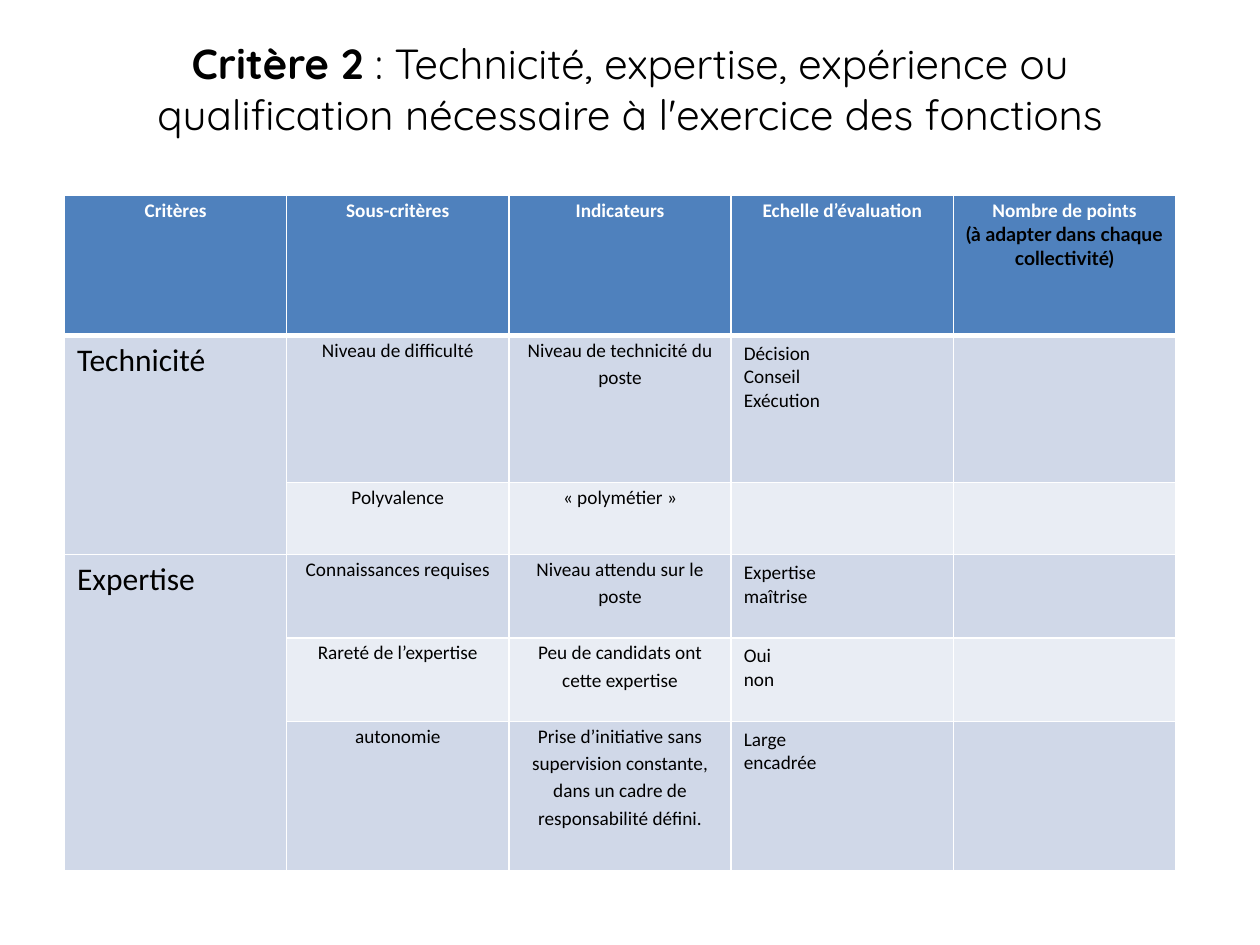
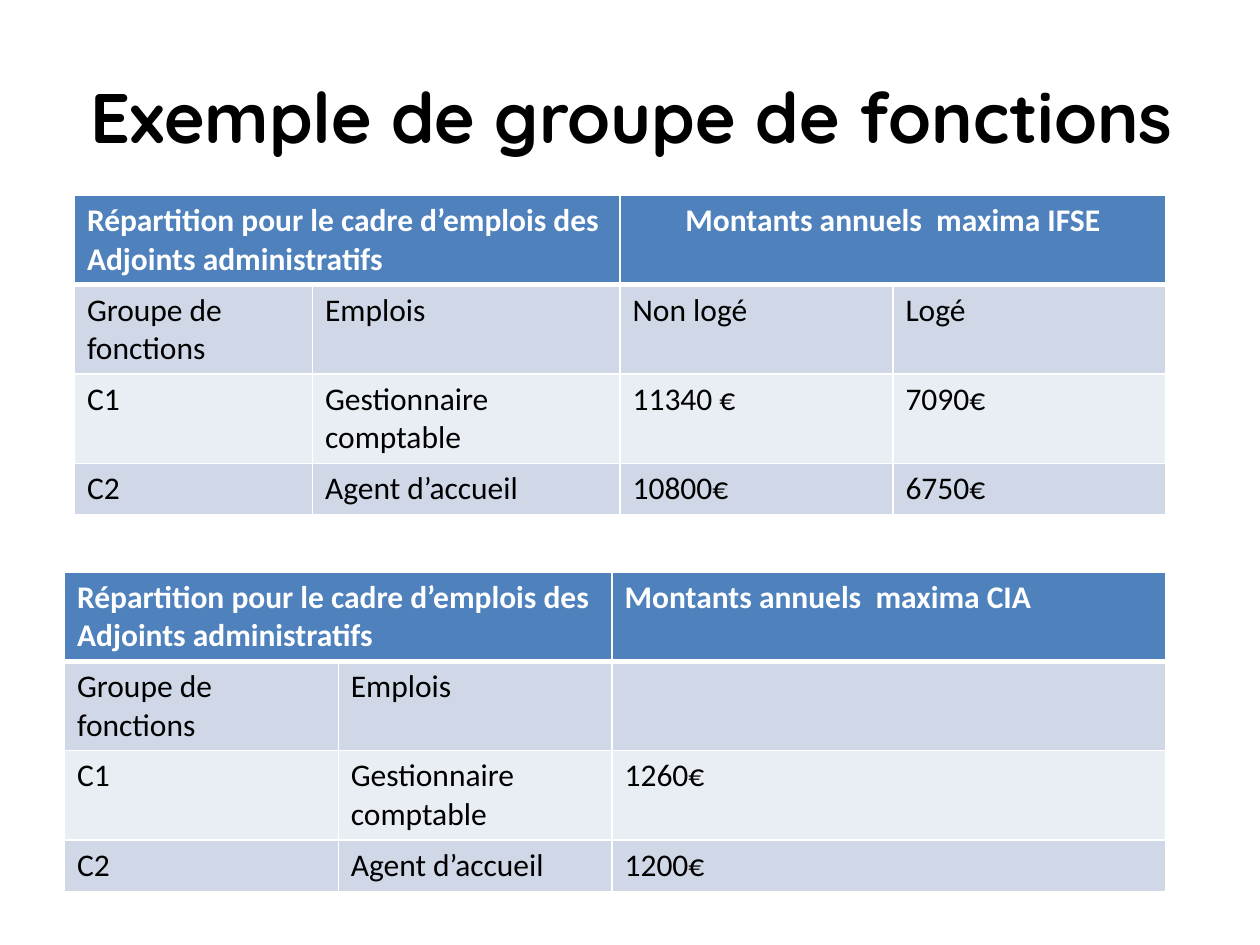
from dataclasses import dataclass

from lxml.etree import SubElement
from pptx import Presentation
from pptx.dml.color import RGBColor
from pptx.enum.text import MSO_ANCHOR as Anchor, PP_ALIGN as Align
from pptx.oxml.ns import qn
from pptx.util import Cm, Pt


@dataclass(frozen=True)
class Theme:
    """Colours, fonts and type sizes shared by the slides."""
    text: str = "000000"
    white: str = "FFFFFF"
    header: str = "4F81BD"
    bands: tuple = ("E9EDF4", "D0D8E8")
    title_font: str = "Quicksand"
    body_font: str = "Calibri"
    note_font: str = "Lato"
    title: int = 40
    long_title: int = 24
    body: int = 18
    small: int = 11
    rule: int = 1
    header_rule: int = 3


THEME = Theme()
TITLE_SIZE = (22.86, 3.18)
TABLE_TOP = 3.94
CRITERIA_ROWS = (2.82, 2.97, 1.45, 1.68, 1.68, 3.02)
AMOUNT_ROWS = (1.8, 1.8, 1.8, 1.04)
AMOUNT_HEADING = "Répartition pour le cadre d’emplois des Adjoints administratifs"

CRITERIA = (
    ("Critères", "Sous-critères", "Indicateurs", "Echelle d’évaluation", "Nombre de points"),
    ("Technicité", "Niveau de difficulté", "Niveau de technicité du poste",
     "Décision\nConseil\nExécution", ""),
    ("", "Polyvalence", "« polymétier »", "", ""),
    ("Expertise", "Connaissances requises", "Niveau attendu sur le poste",
     "Expertise\nmaîtrise", ""),
    ("", "Rareté de l’expertise", "Peu de candidats ont cette expertise", "Oui\nnon", ""),
    ("", "autonomie", "Prise d’initiative sans supervision constante, "
     "dans un cadre de responsabilité défini.", "Large\nencadrée", ""),
)
IFSE = (
    (AMOUNT_HEADING, "", "Montants annuels  maxima IFSE", ""),
    ("Groupe de fonctions", "Emplois", "Non logé", "Logé"),
    ("C1", "Gestionnaire comptable", "11340 €", "7090€"),
    ("C2", "Agent d’accueil", "10800€", "6750€"),
)
CIA = (
    (AMOUNT_HEADING, "", "Montants annuels  maxima CIA"),
    ("Groupe de fonctions", "Emplois", ""),
    ("C1", "Gestionnaire comptable", "1260€"),
    ("C2", "Agent d’accueil", "1200€"),
)


def add_run(p, text, size=THEME.body, font=THEME.body_font, color=THEME.text, bold=False):
    """Append formatted text to a paragraph."""
    r = p.add_run()
    r.text = text
    r.font.size = Pt(size)
    r.font.name = font
    r.font.bold = bold
    r.font.color.rgb = RGBColor.from_string(color)


def add_title(s, left, top, runs, size, anchor=Anchor.MIDDLE):
    """Add a centred title made of (text, bold) runs."""
    sp = s.shapes.add_textbox(Cm(left), Cm(top), *map(Cm, TITLE_SIZE))
    tf = sp.text_frame
    tf.word_wrap = True
    tf.vertical_anchor = anchor
    if anchor == Anchor.TOP:
        tf.margin_top = 0
    p = tf.paragraphs[0]
    p.alignment = Align.CENTER
    for text, bold in runs:
        add_run(p, text, size=size, font=THEME.title_font, bold=bold)


def set_borders(cell, top, bottom):
    """Draw white rules around a cell, with the given top and bottom widths."""
    tc_pr = cell._tc.get_or_add_tcPr()
    widths = {"a:lnL": THEME.rule, "a:lnR": THEME.rule, "a:lnT": top, "a:lnB": bottom}
    for tag, width in widths.items():
        ln = SubElement(tc_pr, qn(tag), w=str(Pt(width)))
        SubElement(SubElement(ln, qn("a:solidFill")), qn("a:srgbClr"), val=THEME.white)


def fill_cell(cell, text, centred=False, compact=False, **fmt):
    """Write one paragraph per line; compact cells have tight insets and open lines."""
    if compact:
        cell.margin_left = cell.margin_right = Cm(0.18)
        cell.margin_top = cell.margin_bottom = 0
    for i, line in enumerate(text.split("\n") if text else ()):
        tf = cell.text_frame
        p = tf.add_paragraph() if i else tf.paragraphs[0]
        p.alignment = Align.CENTER if centred else Align.LEFT
        if compact:
            p.line_spacing = 1.15
        add_run(p, line, **fmt)


def add_table(s, left, top, col_widths, row_heights, data, spans, style):
    """Add a banded table; style(row, column) gives each cell's text options."""
    frame = s.shapes.add_table(len(data), len(col_widths), Cm(left), Cm(top),
                               Cm(sum(col_widths)), Cm(sum(row_heights)))
    table = frame.table
    for col, width in zip(table.columns, col_widths):
        col.width = Cm(width)
    for i, (row, height) in enumerate(zip(table.rows, row_heights)):
        row.height = Cm(height)
        for j, cell in enumerate(row.cells):
            set_borders(cell, THEME.header_rule if i == 1 else THEME.rule,
                        THEME.rule if i else THEME.header_rule)
            cell.fill.solid()
            color = THEME.bands[i % 2] if i else THEME.header
            cell.fill.fore_color.rgb = RGBColor.from_string(color)
            heading = {} if i else {"color": THEME.white, "bold": True}
            fill_cell(cell, data[i][j], **heading, **style(i, j))
    for first, last in spans:
        table.cell(*first).merge(table.cell(*last))
    return table


def criteria_style(row, col):
    """Give the text options of a criteria cell."""
    if row and col == 0:
        return {}
    compact = row == 0 or col in (1, 2)
    return {"size": THEME.small, "centred": compact, "compact": compact}


def ifse_style(row, col):
    """Centre the heading of the IFSE amounts."""
    return {"centred": (row, col) == (0, 2)}


def cia_style(row, col):
    """Keep every CIA cell at the left."""
    return {}


def add_criteria_slide(prs):
    """Build the slide on criterion 2."""
    s = prs.slides.add_slide(prs.slide_layouts[6])
    add_title(s, 1.27, 0.76, (
        ("Critère 2 ", True),
        (": Technicité, expertise, expérience ou qualification nécessaire "
         "à l'exercice des fonctions", False)), THEME.long_title, Anchor.TOP)
    table = add_table(s, 1.3, TABLE_TOP, (4.48,) * 5, CRITERIA_ROWS, CRITERIA,
                      (((1, 0), (2, 0)), ((3, 0), (5, 0))), criteria_style)
    p = table.cell(0, 4).text_frame.add_paragraph()
    p.alignment = Align.CENTER
    add_run(p, "(à adapter dans chaque collectivité)", size=THEME.small,
            font=THEME.note_font, bold=True)


def add_amounts_slide(prs):
    """Build the slide on the yearly amounts of each group."""
    s = prs.slides.add_slide(prs.slide_layouts[6])
    add_title(s, 1.3, 0.74, (("Exemple de groupe de fonctions", True),), THEME.title)
    add_table(s, 1.5, TABLE_TOP, (4.8, 6.2, 5.5, 5.5), AMOUNT_ROWS, IFSE,
              (((0, 0), (0, 1)), ((0, 2), (0, 3))), ifse_style)
    add_table(s, 1.3, 11.53, (5.52, 5.52, 11.16), AMOUNT_ROWS, CIA,
              (((0, 0), (0, 1)),), cia_style)


def main():
    """Build and save the presentation."""
    prs = Presentation()
    prs.slide_width, prs.slide_height = Cm(25.4), Cm(19.05)
    add_criteria_slide(prs)
    add_amounts_slide(prs)
    prs.save("out.pptx")


if __name__ == "__main__":
    main()
